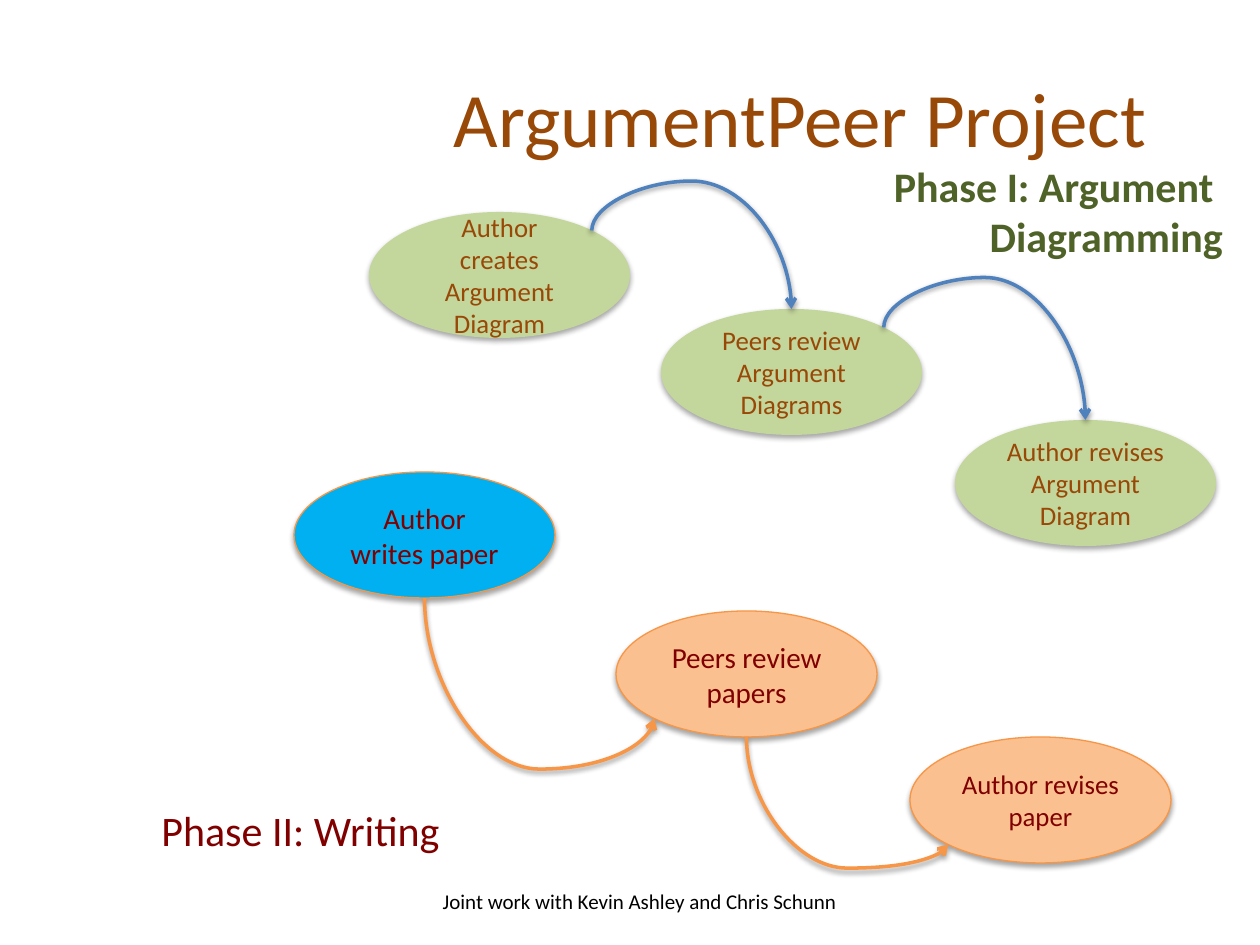
import math

import pptx
import pptx.dml.color
import pptx.enum.shapes
import pptx.enum.text
import pptx.oxml
import pptx.oxml.ns
import pptx.util

PX = 914400 / 126
FONT = "Calibri"
ALIGN = pptx.enum.text.PP_ALIGN
ANCHOR = pptx.enum.text.MSO_ANCHOR

COLORS = {
    "green": "C3D69B", "blue": "00B0F0", "peach": "FAC090",
    "orange": "F79646", "arrow_blue": "4F81BD",
    "brown": "984807", "maroon": "800000", "olive": "4F6228", "black": "000000",
}

OVAL_WIDTH, OVAL_HEIGHT = 261, 126
# Text, left, top, text size, fill
DIAGRAM_STEPS = [
    ("Author creates Argument Diagram", 369, 212, 15.3, "green"),
    ("Peers review Argument Diagrams", 661, 309, 15.3, "green"),
    ("Author revises Argument Diagram", 955, 420, 15.3, "green"),
]
WRITING_STEPS = [
    ("Author writes paper", 294, 472, 16.6, "blue"),
    ("Peers review papers", 616, 611, 16.6, "peach"),
    ("Author revises paper", 910, 737, 15.3, "peach"),
]
# Steps, line, text colour, outline, angles (degrees, clockwise from the right)
# where arrows leave and enter an oval, bend of each arrow
PHASES = [
    (DIAGRAM_STEPS, "arrow_blue", "brown", None, (-45, -90), (-0.63, -0.54)),
    (WRITING_STEPS, "orange", "maroon", "orange", (90, 135), (1.42, 1.22)),
]

# Lines, (left, top, width, height), size, colour, bold, align, anchor, wrap, right inset
LABELS = [
    (["Phase II: Writing"], (149, 798, 336, 63), 24, "maroon", False,
     ALIGN.LEFT, ANCHOR.TOP, False, 13),
    (["Phase I: Argument ", "Diagramming"], (878, 154, 358, 115), 24, "olive", True,
     ALIGN.RIGHT, ANCHOR.TOP, False, 13),
    (["ArgumentPeer Project"], (63, 38, 1134, 157), 44, "brown", False,
     ALIGN.RIGHT, ANCHOR.MIDDLE, True, 50),
    (["Joint work with Kevin Ashley and Chris Schunn"], (427, 876, 426, 50), 12, "black",
     False, ALIGN.CENTER, ANCHOR.MIDDLE, True, 13),
]


def px(value):
    return pptx.util.Emu(round(value * PX))


def color(name):
    return pptx.dml.color.RGBColor.from_string(COLORS[name])


def add_shadow(shape, opacity, distance):
    """Cast a soft black shadow straight down; distance is in points."""
    shape._element.spPr.append(pptx.oxml.parse_xml(
        f'<a:effectLst {pptx.oxml.ns.nsdecls("a")}>'
        f'<a:outerShdw blurRad="{pptx.util.Pt(3.1)}" dist="{pptx.util.Pt(distance)}" '
        'dir="5400000" rotWithShape="0"><a:srgbClr val="000000">'
        f'<a:alpha val="{opacity * 1000}"/></a:srgbClr></a:outerShdw></a:effectLst>'))


def write(frame, lines, size, text_color, align, bold=False):
    frame.text = "\n".join(lines)
    for paragraph in frame.paragraphs:
        paragraph.alignment = align
        for span in paragraph.runs:
            span.font.name = FONT
            span.font.size = pptx.util.Pt(size)
            span.font.bold = bold
            span.font.color.rgb = color(text_color)


def add_oval(page, step, text_color, outline):
    text, left, top, size, fill = step
    oval = page.shapes.add_shape(
        pptx.enum.shapes.MSO_SHAPE.OVAL,
        px(left), px(top), px(OVAL_WIDTH), px(OVAL_HEIGHT))
    oval.fill.solid()
    oval.fill.fore_color.rgb = color(fill)
    if outline:
        oval.line.color.rgb = color(outline)
        oval.line.width = pptx.util.Pt(0.75)
    else:
        oval.line.fill.background()
    add_shadow(oval, 35, 1.8)
    oval.text_frame.word_wrap = True
    oval.text_frame.vertical_anchor = ANCHOR.MIDDLE
    write(oval.text_frame, [text], size, text_color, ALIGN.CENTER)


def rim_point(step, degrees):
    angle = math.radians(degrees)
    return (step[1] + OVAL_WIDTH / 2 * (1 + math.cos(angle)),
            step[2] + OVAL_HEIGHT / 2 * (1 + math.sin(angle)))


def add_curve(page, start, end, bend, line_color):
    """Draw a curve that leaves and arrives vertically: a mirrored curve turned by 270 degrees."""
    middle_x, middle_y = (start[0] + end[0]) / 2, (start[1] + end[1]) / 2
    half_width, half_height = (end[1] - start[1]) / 2, (end[0] - start[0]) / 2
    curve = page.shapes.add_connector(
        pptx.enum.shapes.MSO_CONNECTOR.CURVE,
        px(middle_x + half_width), px(middle_y - half_height),
        px(middle_x - half_width), px(middle_y + half_height))
    curve.line.color.rgb = color(line_color)
    curve.line.width = pptx.util.Pt(2)
    namespace = pptx.oxml.ns.nsdecls("a")
    properties = curve._element.spPr
    properties.find(pptx.oxml.ns.qn("a:xfrm")).set("rot", "16200000")
    adjustments = properties.find(".//" + pptx.oxml.ns.qn("a:avLst"))
    adjustments.append(pptx.oxml.parse_xml(
        f'<a:gd {namespace} name="adj1" fmla="val {round(bend * 100000)}"/>'))
    properties.find(pptx.oxml.ns.qn("a:ln")).append(
        pptx.oxml.parse_xml(f'<a:tailEnd {namespace} type="arrow"/>'))
    add_shadow(curve, 38, 1.6)


def add_label(page, lines, place, size, text_color, bold, align, anchor, wrap, inset):
    box = page.shapes.add_textbox(*map(px, place))
    frame = box.text_frame
    frame.word_wrap = wrap
    frame.vertical_anchor = anchor
    frame.margin_right = px(inset)
    write(frame, lines, size, text_color, align, bold)


def main():
    deck = pptx.Presentation()
    deck.slide_width = pptx.util.Inches(10)
    deck.slide_height = pptx.util.Inches(7.5)
    page = deck.slides.add_slide(deck.slide_layouts[6])

    for steps, _, text_color, outline, _, _ in PHASES:
        for step in steps:
            add_oval(page, step, text_color, outline)
    for steps, line_color, _, _, (leave, enter), bends in PHASES:
        for source, target, bend in zip(steps, steps[1:], bends):
            add_curve(page, rim_point(source, leave), rim_point(target, enter),
                      bend, line_color)
    for label in LABELS:
        add_label(page, *label)

    deck.save("out.pptx")


if __name__ == "__main__":
    main()
